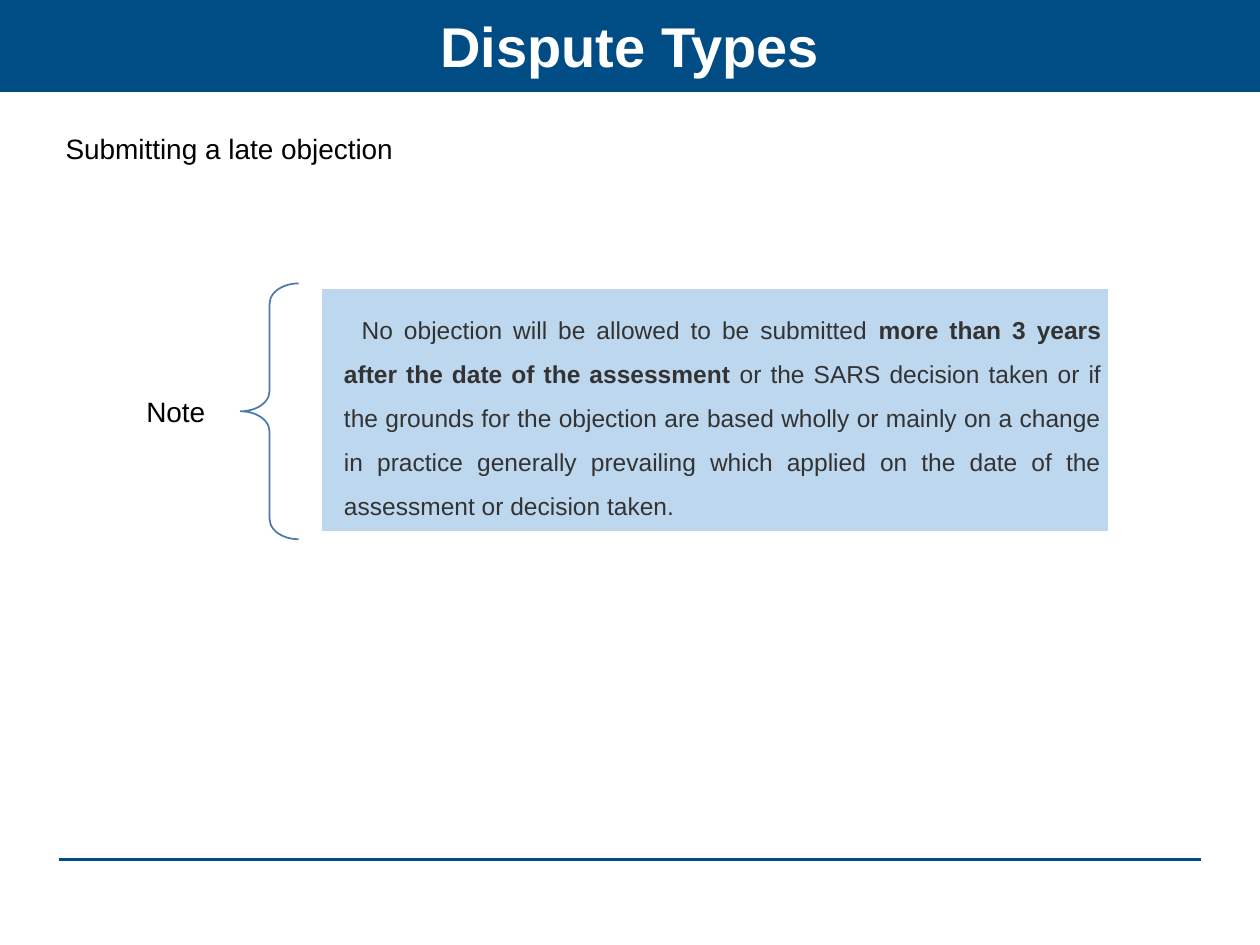
from typing import NamedTuple

from lxml.etree import SubElement
from pptx import Presentation
from pptx.dml.color import RGBColor
from pptx.enum.shapes import MSO_CONNECTOR, MSO_SHAPE
from pptx.enum.text import MSO_ANCHOR as ANCHOR, MSO_AUTO_SIZE, PP_ALIGN as ALIGN
from pptx.oxml.ns import qn
from pptx.util import Inches, Pt

NAVY, PALE_BLUE, BRACE_BLUE = "004C85", "BDD7EE", "497CAB"
WHITE, BLACK, GREY = "FFFFFF", "000000", "333333"


class Span(NamedTuple):
    text: str
    bold: bool = False


class Style(NamedTuple):
    size: float
    color: str
    align: ALIGN
    anchor: ANCHOR
    spacing: float = 1.0
    after: float = 0
    margins: tuple[float, float] = (0.1, 0.05)
    left: float = 0
    indent: float = 0


def rgb(color: str) -> RGBColor:
    return RGBColor.from_string(color)


def box(left: float, top: float, width: float, height: float) -> tuple:
    return tuple(Inches(v) for v in (left, top, width, height))


def place(sp, left: float, top: float, width: float, height: float) -> None:
    sp.left, sp.top, sp.width, sp.height = box(left, top, width, height)


def fill(sp, color: str) -> None:
    sp.fill.solid()
    sp.fill.fore_color.rgb = rgb(color)


def outline(sp, color: str, width: float) -> None:
    sp.line.color.rgb = rgb(color)
    sp.line.width = Pt(width)


def write(sp, spans: list[Span], style: Style) -> None:
    """Fill the shape with one unbulleted paragraph."""
    tf = sp.text_frame
    tf.word_wrap = True
    tf.auto_size = MSO_AUTO_SIZE.NONE
    tf.vertical_anchor = style.anchor
    side, edge = (Inches(m) for m in style.margins)
    tf.margin_left = tf.margin_right = side
    tf.margin_top = tf.margin_bottom = edge
    p = tf.paragraphs[0]
    p.alignment = style.align
    p.line_spacing = style.spacing
    p.space_before, p.space_after = Pt(0), Pt(style.after)
    pPr = p._p.get_or_add_pPr()
    pPr.set("marL", str(Inches(style.left)))
    pPr.set("indent", str(Inches(style.indent)))
    SubElement(pPr, qn("a:buNone"))
    for span in spans:
        r = p.add_run()
        r.text = span.text
        r.font.name = "Arial"
        r.font.size = Pt(style.size)
        r.font.bold = span.bold
        r.font.color.rgb = rgb(style.color)


def add_footer_rule(s) -> None:
    rule = s.shapes.add_connector(
        MSO_CONNECTOR.STRAIGHT, Inches(0.47), Inches(6.82), Inches(9.53), Inches(6.82))
    outline(rule, NAVY, 2)
    SubElement(rule._element.spPr, qn("a:effectLst"))


def add_note(s) -> None:
    """Add the label, the brace and the panel it points to, as one group."""
    group = s.shapes.add_group_shape().shapes
    label = group.add_textbox(*box(0.58, 2.58, 1.17, 1.41))
    write(label, [Span("Note")],
          Style(16, BLACK, ALIGN.RIGHT, ANCHOR.MIDDLE, 0.9, 5.6, (0.12, 0.04)))

    brace = group.add_shape(MSO_SHAPE.LEFT_BRACE, *box(1.91, 2.25, 0.46, 2.03))
    brace.adjustments[0], brace.adjustments[1] = 0.35, 0.5
    brace.fill.background()
    outline(brace, BRACE_BLUE, 1)
    brace.shadow.inherit = False

    panel = group.add_shape(MSO_SHAPE.RECTANGLE, *box(2.55, 2.29, 6.25, 1.93))
    fill(panel, PALE_BLUE)
    outline(panel, WHITE, 1)
    panel.shadow.inherit = False
    write(panel, [
        Span("No objection will be allowed to be submitted "),
        Span("more than 3 years after the date of the assessment ", bold=True),
        Span("or the SARS decision taken or if the grounds for the objection are based "
             "wholly or mainly on a change in practice generally prevailing which applied "
             "on the date of the assessment or decision taken."),
    ], Style(14, GREY, ALIGN.JUSTIFY, ANCHOR.MIDDLE, 1.5, 2.1, (0.06, 0.06), 0.12, 0.14))


def main() -> None:
    prs = Presentation()
    prs.slide_width, prs.slide_height = Inches(10), Inches(7.5)
    s = prs.slides.add_slide(prs.slide_layouts[1])
    title, body = s.placeholders

    place(title, 0, -0.02, 10, 0.75)
    fill(title, NAVY)
    write(title, [Span("Dispute Types", bold=True)],
          Style(32, WHITE, ALIGN.CENTER, ANCHOR.MIDDLE, margins=(0.1, 0.1)))

    place(body, 0.42, 0.86, 9.15, 5.78)
    fill(body, WHITE)
    write(body, [Span("Submitting a late objection")],
          Style(16, BLACK, ALIGN.JUSTIFY, ANCHOR.TOP, 1.5))

    add_footer_rule(s)
    add_note(s)
    prs.save("out.pptx")


if __name__ == "__main__":
    main()
